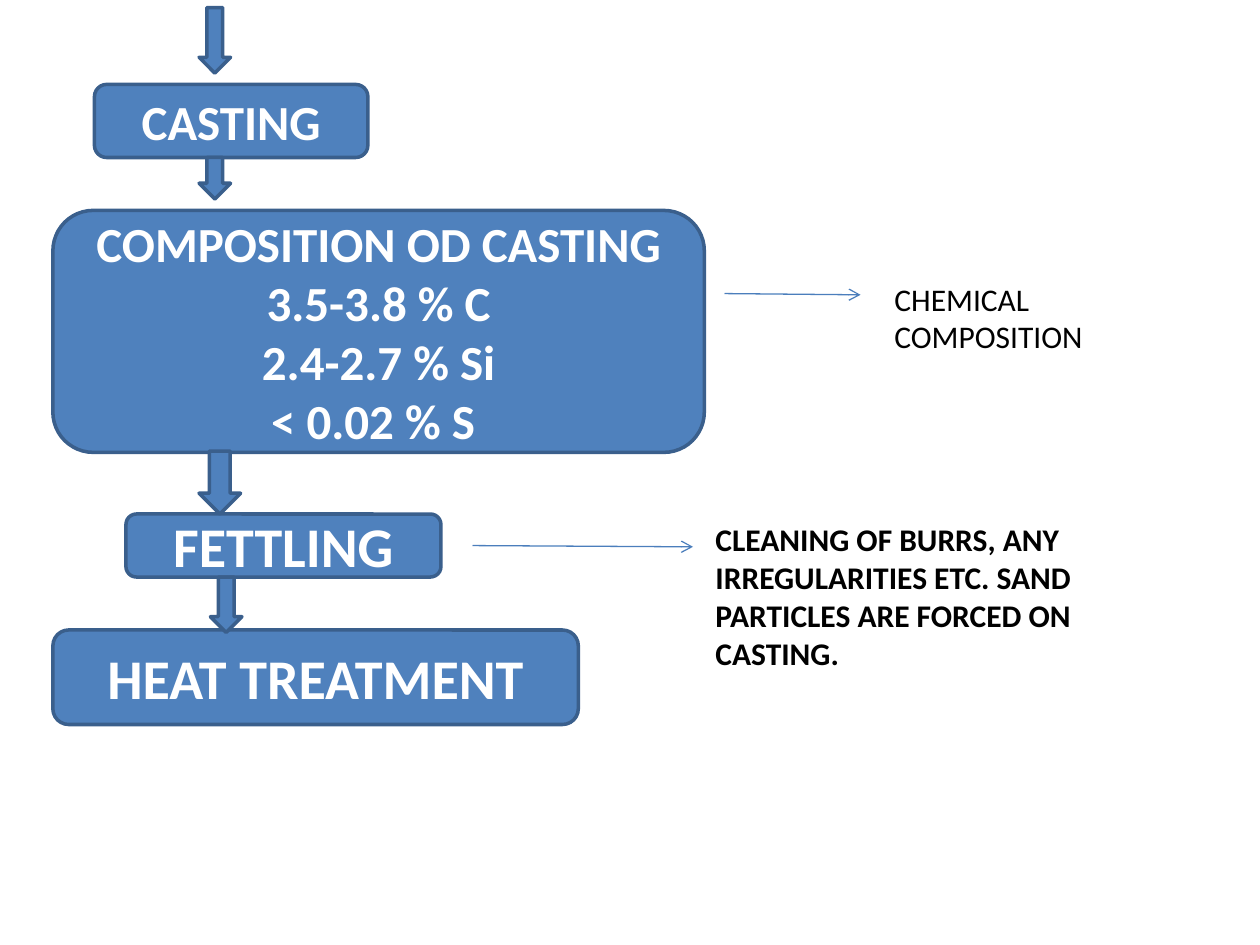
from lxml.etree import SubElement
from pptx import Presentation
from pptx.dml.color import RGBColor
from pptx.enum.shapes import MSO_CONNECTOR, MSO_SHAPE
from pptx.enum.text import MSO_ANCHOR, MSO_AUTO_SIZE, PP_ALIGN
from pptx.oxml.ns import qn
from pptx.util import Inches, Pt

COLORS = {"fill": "4F81BD", "border": "3A5F8C", "link": "4B7EBC",
          "light": "FFFFFF", "dark": "000000"}

STEPS = [
    (["CASTING"], (0.75, 0.67, 2.17, 0.58), 28),
    (["COMPOSITION OD CASTING 3.5-3.8 % C", "2.4-2.7 % Si", "< 0.02 % S "],
     (0.42, 1.67, 5.17, 1.92), 28),
    (["FETTLING"], (1, 4.08, 2.5, 0.5), 32),
    (["HEAT TREATMENT"], (0.42, 5, 4.17, 0.75), 32),
]
DOWN_ARROWS = [
    (1.58, 0.06, 0.25, 0.52),
    (1.58, 1.25, 0.25, 0.33),
    (1.58, 3.58, 0.33, 0.5),
    (1.67, 4.58, 0.25, 0.44),
]
NOTES = [
    ("CHEMICAL COMPOSITION", (7, 2.17, 2.42, 0.71), False),
    ("CLEANING OF BURRS, ANY IRREGULARITIES ETC. SAND PARTICLES ARE FORCED ON CASTING.",
     (5.58, 4.08, 3.75, 1.31), True),
]
LINKS = [(5.75, 2.33, 6.83, 2.34), (3.75, 4.33, 5.5, 4.34)]


def rgb(name):
    return RGBColor.from_string(COLORS[name])


def write(tf, lines, size=18, color="dark", bold=False, align=PP_ALIGN.LEFT):
    tf.word_wrap = True
    for i, line in enumerate(lines):
        p = tf.paragraphs[0] if i == 0 else tf.add_paragraph()
        p.alignment = align
        r = p.add_run()
        r.text = line
        r.font.name = "Calibri"
        r.font.size = Pt(size)
        r.font.bold = bold
        r.font.color.rgb = rgb(color)


def add_block(s, kind, box):
    sp = s.shapes.add_shape(kind, *map(Inches, box))
    sp.shadow.inherit = False
    sp.fill.solid()
    sp.fill.fore_color.rgb = rgb("fill")
    sp.line.color.rgb = rgb("border")
    sp.line.width = Pt(2)
    return sp


def add_link(s, ends):
    cn = s.shapes.add_connector(MSO_CONNECTOR.STRAIGHT, *map(Inches, ends))
    cn.line.color.rgb = rgb("link")
    cn.line.width = Pt(0.75)
    SubElement(cn.line._get_or_add_ln(), qn("a:tailEnd"), type="arrow")
    SubElement(cn._element.spPr, qn("a:effectLst"))


def main():
    prs = Presentation()
    prs.slide_width, prs.slide_height = Inches(10), Inches(7.5)
    s = prs.slides.add_slide(prs.slide_layouts[6])
    for lines, box, size in STEPS:
        tf = add_block(s, MSO_SHAPE.ROUNDED_RECTANGLE, box).text_frame
        tf.vertical_anchor = MSO_ANCHOR.MIDDLE
        write(tf, lines, size=size, color="light", bold=True, align=PP_ALIGN.CENTER)
    for box in DOWN_ARROWS:
        add_block(s, MSO_SHAPE.DOWN_ARROW, box)
    for text, box, bold in NOTES:
        tf = s.shapes.add_textbox(*map(Inches, box)).text_frame
        write(tf, [text], bold=bold)
        tf.auto_size = MSO_AUTO_SIZE.SHAPE_TO_FIT_TEXT
    for ends in LINKS:
        add_link(s, ends)
    prs.save("out.pptx")


if __name__ == "__main__":
    main()
